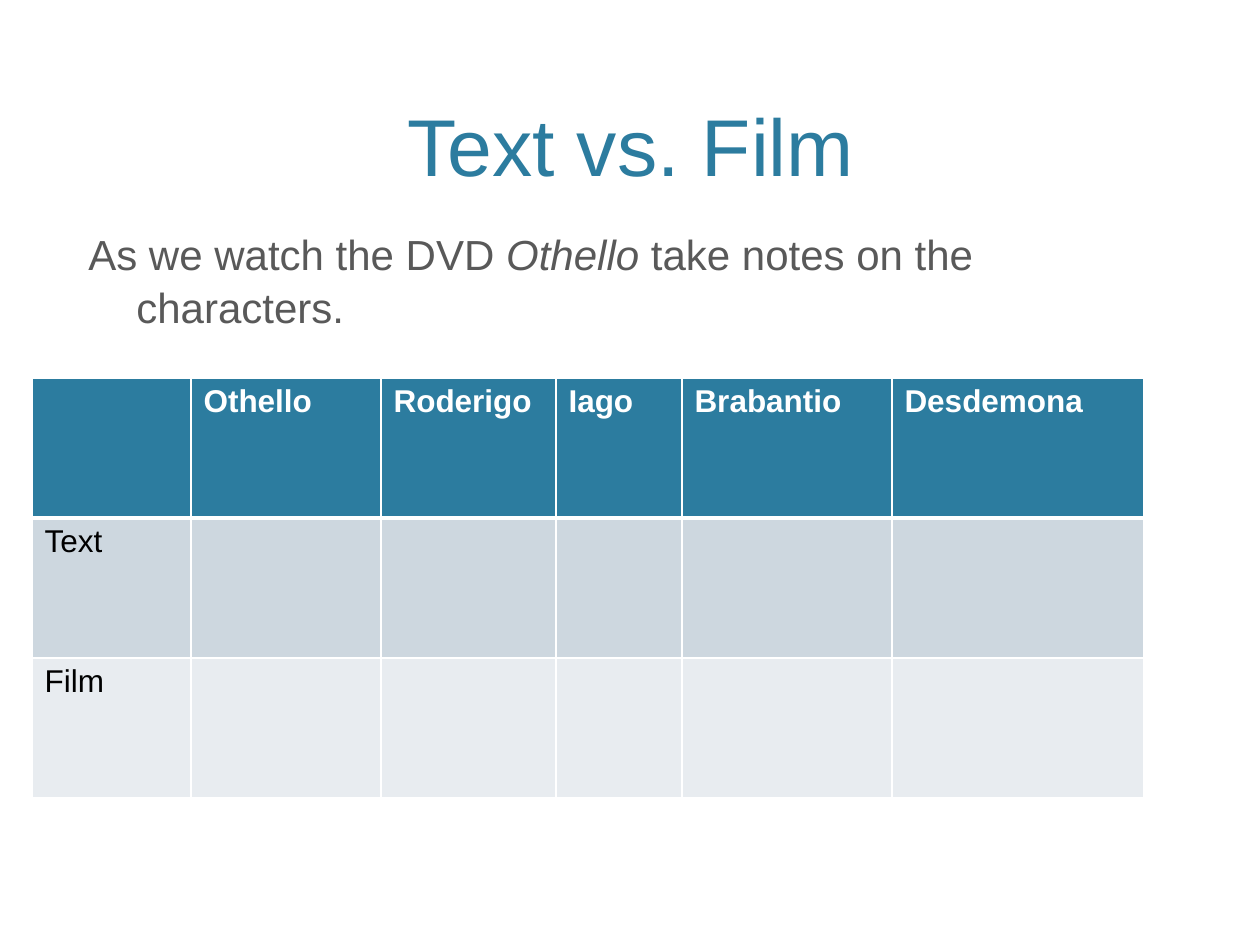
from lxml import etree
from pptx import Presentation
from pptx.dml.color import RGBColor
from pptx.enum.text import MSO_ANCHOR, MSO_AUTO_SIZE, PP_ALIGN
from pptx.oxml.ns import qn
from pptx.util import Emu, Pt

BOTTOM, TOP = MSO_ANCHOR.BOTTOM, MSO_ANCHOR.TOP
CENTER, LEFT = PP_ALIGN.CENTER, PP_ALIGN.LEFT
NO_AUTOFIT = MSO_AUTO_SIZE.NONE

TEAL = RGBColor(0x2C, 0x7C, 0x9F)
GRAY = RGBColor(0x59, 0x59, 0x59)
WHITE = RGBColor(0xFF, 0xFF, 0xFF)
BLACK = RGBColor(0x00, 0x00, 0x00)
BAND_DARK = RGBColor(0xCD, 0xD7, 0xDF)
BAND_LIGHT = RGBColor(0xE8, 0xEC, 0xF0)

FONT = "Arial"
PX_PER_INCH = 126
TITLE_ONLY = 5

# Boxes in px: left, top, width, height
TITLE_BOX = (76, 15, 1109, 184)
BODY_BOX = (76, 220, 1109, 599)
TABLE_BOX = (32, 378, 1112, 420)

COLUMN_WIDTHS = (159, 190, 175, 126, 210, 252)
CHARACTERS = ("Othello", "Roderigo", "Iago", "Brabantio", "Desdemona")
# Row texts, fill, text colour, bold, top and bottom border in points
TABLE_ROWS = (
    (("",) + CHARACTERS, TEAL, WHITE, True, 1, 3),
    (("Text",) + ("",) * len(CHARACTERS), BAND_DARK, BLACK, False, 3, 1),
    (("Film",) + ("",) * len(CHARACTERS), BAND_LIGHT, BLACK, False, 1, 1),
)


def px(length):
    return Emu(round(length * 914400 / PX_PER_INCH))


def add_run(paragraph, text, size, color, bold=False, italic=False):
    run = paragraph.add_run()
    run.text = text
    font = run.font
    font.name, font.size = FONT, Pt(size)
    font.bold, font.italic = bold, italic
    font.color.rgb = color


def set_border(cell, side, points):
    properties = cell._tc.get_or_add_tcPr()
    line = etree.SubElement(properties, qn(f"a:ln{side}"), w=str(Pt(points)))
    fill = etree.SubElement(line, qn("a:solidFill"))
    etree.SubElement(fill, qn("a:srgbClr"), val=str(WHITE))


def place_title(slide, box):
    title = slide.shapes.title
    title.left, title.top, title.width, title.height = map(px, box)
    frame = title.text_frame
    frame.auto_size = NO_AUTOFIT
    frame.vertical_anchor = BOTTOM
    paragraph = frame.paragraphs[0]
    paragraph.alignment = CENTER
    add_run(paragraph, "Text vs. Film", 46, TEAL)


def place_instructions(slide, box):
    frame = slide.shapes.add_textbox(*map(px, box)).text_frame
    frame.word_wrap = True
    frame.vertical_anchor = TOP
    paragraph = frame.paragraphs[0]
    paragraph.alignment = LEFT
    paragraph.space_before = Pt(20)
    paragraph.line_spacing = 1.05
    # Hanging indent
    properties = paragraph._p.get_or_add_pPr()
    properties.set("marL", str(px(48)))
    properties.set("indent", str(-px(48)))
    add_run(paragraph, "As we watch the DVD ", 24, GRAY)
    add_run(paragraph, "Othello", 24, GRAY, italic=True)
    add_run(paragraph, " take notes on the characters.", 24, GRAY)


def place_notes_table(slide, box):
    frame = slide.shapes.add_table(len(TABLE_ROWS), len(COLUMN_WIDTHS), *map(px, box))
    table = frame.table
    for column, width in zip(table.columns, COLUMN_WIDTHS):
        column.width = px(width)
    for row, (texts, fill, color, bold, top, bottom) in zip(table.rows, TABLE_ROWS):
        row.height = px(box[3] / len(TABLE_ROWS))
        for cell, text in zip(row.cells, texts):
            # Borders come before the fill in the cell properties
            for side, points in (("L", 1), ("R", 1), ("T", top), ("B", bottom)):
                set_border(cell, side, points)
            cell.fill.solid()
            cell.fill.fore_color.rgb = fill
            if text:
                add_run(cell.text_frame.paragraphs[0], text, 18, color, bold)


def main():
    presentation = Presentation()
    presentation.slide_width, presentation.slide_height = px(1260), px(945)
    slide = presentation.slides.add_slide(presentation.slide_layouts[TITLE_ONLY])
    place_title(slide, TITLE_BOX)
    place_instructions(slide, BODY_BOX)
    place_notes_table(slide, TABLE_BOX)
    presentation.save("out.pptx")


if __name__ == "__main__":
    main()
